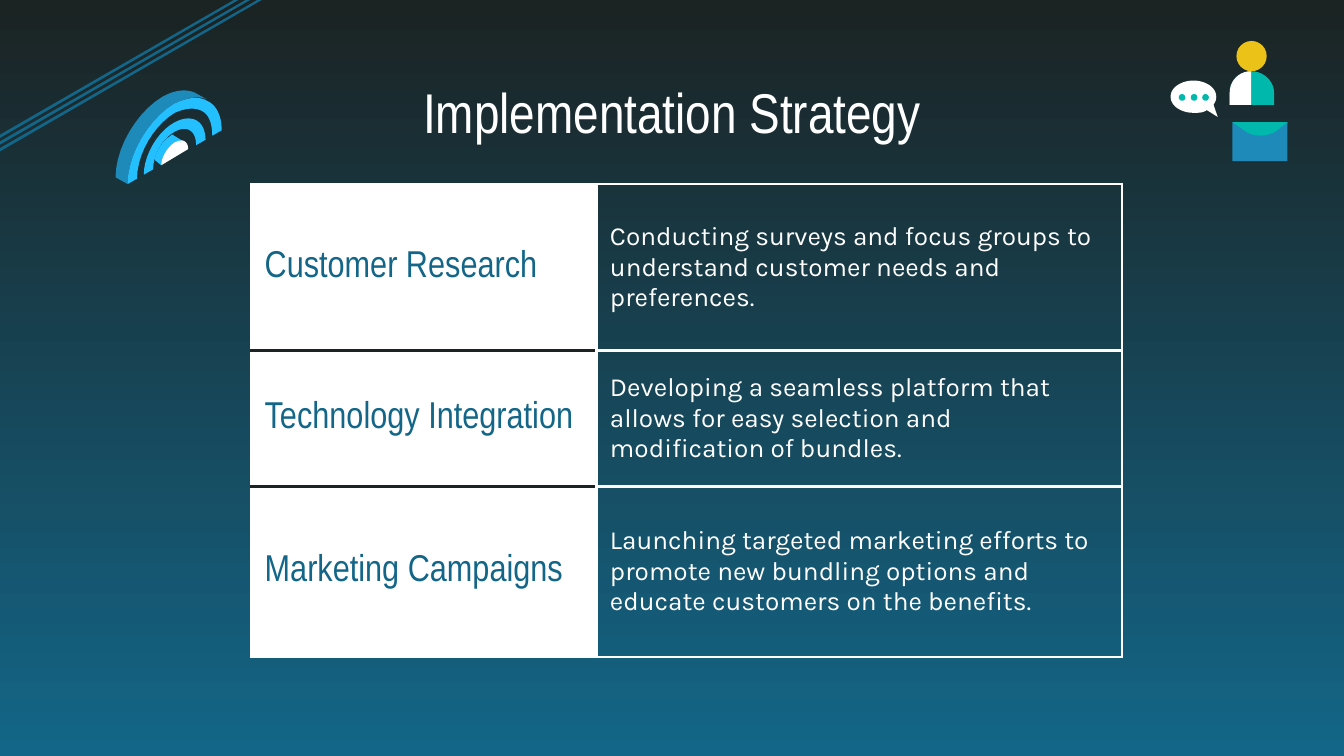
from pptx import Presentation
from pptx.dml.color import RGBColor
from pptx.enum.shapes import MSO_SHAPE
from pptx.enum.text import MSO_ANCHOR, PP_ALIGN
from pptx.oxml import parse_xml
from pptx.oxml.ns import nsdecls
from pptx.util import Pt

OVAL, RECTANGLE = MSO_SHAPE.OVAL, MSO_SHAPE.RECTANGLE
MIDDLE, BOTTOM = MSO_ANCHOR.MIDDLE, MSO_ANCHOR.BOTTOM
CENTER = PP_ALIGN.CENTER


class Theme:
    dark, deep, blue, sky = "1B2323", "136688", "1D8ABA", "24BFFF"
    white, teal, yellow = "FFFFFF", "00B8AC", "EBC218"
    heading_font, body_font = "Arial Narrow", "Karla"
    title_size, label_size, body_size = 30, 20, 14
    border = 1.5


TITLE = "Implementation Strategy"
STEPS = [
    ("Customer Research",
     "Conducting surveys and focus groups to understand customer needs and preferences."),
    ("Technology Integration",
     "Developing a seamless platform that allows for easy selection and "
     "modification of bundles."),
    ("Marketing Campaigns",
     "Launching targeted marketing efforts to promote new bundling options and "
     "educate customers on the benefits."),
]
COLUMN_WIDTHS = [185, 281.5]
ROW_HEIGHTS = [89.3, 72.7, 91.4]

# Icons are laid out on a fine grid of this many points.
GRID = 0.72

# Outlines: a start point, then (x, y) for a line or six numbers for a Bezier curve.
BUBBLE = [(888, 60), (879, 60, 871, 65, 871, 72), (871, 79, 879, 84, 888, 84),
          (892, 84, 895, 84, 898, 82), (906, 87), (903, 78),
          (904, 76, 905, 75, 905, 72), (905, 65, 897, 60, 888, 60)]
BODY = [(931, 53), (922, 53, 915, 60, 915, 69), (915, 78), (948, 78), (948, 69),
        (948, 60, 940, 53, 931, 53)]
HALF_BODY = BODY[:3] + [(931, 78)]
FLAP = [(917, 91), (927, 98), (930, 100, 934, 101, 938, 101),
        (942, 101, 945, 100, 949, 98), (958, 91)]
SIGNAL = [
    (Theme.sky, [(128, 100), (136, 105), (134, 105, 132, 105, 130, 106),
                 (125, 109, 120, 117, 120, 123), (115, 119),
                 (116, 113, 120, 107, 124, 103), (126, 102, 127, 101, 128, 100)]),
    (Theme.white, [(130, 106), (125, 109, 120, 117, 120, 123), (140, 111),
                   (140, 108, 139, 106, 137, 105), (135, 104, 132, 105, 130, 106)]),
    (Theme.sky, [(130, 91), (143, 84, 153, 90, 153, 104), (146, 108),
                 (146, 97, 139, 93, 130, 98), (121, 103, 114, 115, 114, 126),
                 (107, 130), (107, 116, 117, 98, 130, 91)]),
    (Theme.blue, [(145, 69), (154, 74), (147, 71, 139, 73, 130, 77),
                  (111, 88, 95, 115, 95, 137), (86, 132),
                  (86, 110, 102, 83, 121, 72), (130, 67, 138, 66, 145, 69)]),
    (Theme.sky, [(130, 77), (139, 73, 147, 71, 154, 75),
                 (161, 78, 165, 86, 165, 97), (158, 101),
                 (158, 93, 156, 86, 151, 83), (146, 80, 139, 80, 130, 84),
                 (115, 93, 102, 114, 102, 133), (95, 137),
                 (95, 115, 111, 88, 130, 77)]),
]
STRIPE_TOPS = [-9, -14, -19]
DOT_LEFTS = [877, 886, 894.5]


def rgb(color):
    return RGBColor.from_string(color)


def paint(shape, color):
    shape.shadow.inherit = False
    shape.fill.solid()
    shape.fill.fore_color.rgb = rgb(color)
    shape.line.fill.background()


def trace(outline, steps=10):
    """Return the outline as grid points, with each curve sampled."""
    points = [outline[0]]
    for segment in outline[1:]:
        if len(segment) == 2:
            points.append(segment)
            continue
        x0, y0 = points[-1]
        x1, y1, x2, y2, x3, y3 = segment
        for step in range(1, steps + 1):
            t = step / steps
            a, b, c, d = (1 - t) ** 3, 3 * t * (1 - t) ** 2, 3 * t * t * (1 - t), t ** 3
            points.append((a * x0 + b * x1 + c * x2 + d * x3,
                           a * y0 + b * y1 + c * y2 + d * y3))
    return points


def add_outline(group, color, outline):
    points = [(Pt(x * GRID), Pt(y * GRID)) for x, y in trace(outline)]
    builder = group.shapes.build_freeform(*points[0])
    builder.add_line_segments(points[1:], close=True)
    paint(builder.convert_to_shape(), color)


def add_preset(group, kind, color, *frame):
    paint(group.shapes.add_shape(kind, *(Pt(length * GRID) for length in frame)), color)


def style(para, font, size, color):
    para.font.name = font
    para.font.size = Pt(size)
    para.font.color.rgb = rgb(color)


def set_borders(cell, left, right, top, bottom):
    properties = cell._tc.get_or_add_tcPr()
    for index, (side, color) in enumerate(zip("LRTB", (left, right, top, bottom))):
        properties.insert(index, parse_xml(
            f'<a:ln{side} {nsdecls("a")} w="{Pt(Theme.border)}"><a:solidFill>'
            f'<a:srgbClr val="{color}"/></a:solidFill></a:ln{side}>'))


def add_customer_icon(page):
    group = page.shapes.add_group_shape()
    add_outline(group, Theme.white, BUBBLE)
    for left in DOT_LEFTS:
        add_preset(group, OVAL, Theme.teal, left, 70, 5, 5)
    add_outline(group, Theme.teal, BODY)
    add_preset(group, OVAL, Theme.yellow, 920, 30.5, 22.5, 22.5)
    add_outline(group, Theme.white, HALF_BODY)
    add_preset(group, RECTANGLE, Theme.blue, 917, 91, 41, 29)
    add_outline(group, Theme.teal, FLAP)


def add_stripes(page):
    group = page.shapes.add_group_shape()
    for top in STRIPE_TOPS:
        add_outline(group, Theme.deep, [(207, top), (207, top + 2),
                                        (-42, top + 146), (-42, top + 143.5)])


def add_title(page):
    box = page.shapes.add_textbox(Pt(56.2), Pt(42.5), Pt(607.7), Pt(42.5))
    frame = box.text_frame
    frame.word_wrap = True
    frame.vertical_anchor = BOTTOM
    frame.margin_left = frame.margin_right = Pt(7.2)
    frame.margin_top = frame.margin_bottom = Pt(7.2)
    para = frame.paragraphs[0]
    para.text = TITLE
    para.alignment = CENTER
    style(para, Theme.heading_font, Theme.title_size, Theme.white)


def add_steps(page):
    table = page.shapes.add_table(
        len(STEPS), len(COLUMN_WIDTHS), Pt(134.6), Pt(98.6),
        Pt(sum(COLUMN_WIDTHS)), Pt(sum(ROW_HEIGHTS))).table
    table.first_row = table.horz_banding = False
    for column, width in zip(table.columns, COLUMN_WIDTHS):
        column.width = Pt(width)
    for index, (texts, height) in enumerate(zip(STEPS, ROW_HEIGHTS)):
        table.rows[index].height = Pt(height)
        label, detail = table.cell(index, 0), table.cell(index, 1)
        for cell, text, margin in zip((label, detail), texts, (0, 7.2)):
            cell.text = text
            cell.vertical_anchor = MIDDLE
            cell.margin_left = cell.margin_right = Pt(7.2)
            cell.margin_top = cell.margin_bottom = Pt(margin)
        label.fill.solid()
        label.fill.fore_color.rgb = rgb(Theme.white)
        detail.fill.background()
        style(label.text_frame.paragraphs[0],
              Theme.heading_font, Theme.label_size, Theme.deep)
        style(detail.text_frame.paragraphs[0],
              Theme.body_font, Theme.body_size, Theme.white)
        top = Theme.dark if index > 0 else Theme.white
        bottom = Theme.dark if index < len(STEPS) - 1 else Theme.white
        set_borders(label, Theme.white, Theme.white, top, bottom)
        set_borders(detail, *[Theme.white] * 4)


def add_signal_icon(page):
    group = page.shapes.add_group_shape()
    for color, outline in SIGNAL:
        add_outline(group, color, outline)


def main():
    deck = Presentation()
    deck.slide_width, deck.slide_height = Pt(720), Pt(405)
    page = deck.slides.add_slide(deck.slide_layouts[6])
    backdrop = page.background.fill
    backdrop.gradient()
    backdrop.gradient_angle = 270
    for stop, position, color in zip(backdrop.gradient_stops, (0, 1),
                                     (Theme.dark, Theme.deep)):
        stop.position = position
        stop.color.rgb = rgb(color)
    add_customer_icon(page)
    add_stripes(page)
    add_title(page)
    add_steps(page)
    add_signal_icon(page)
    deck.save("out.pptx")


if __name__ == "__main__":
    main()
